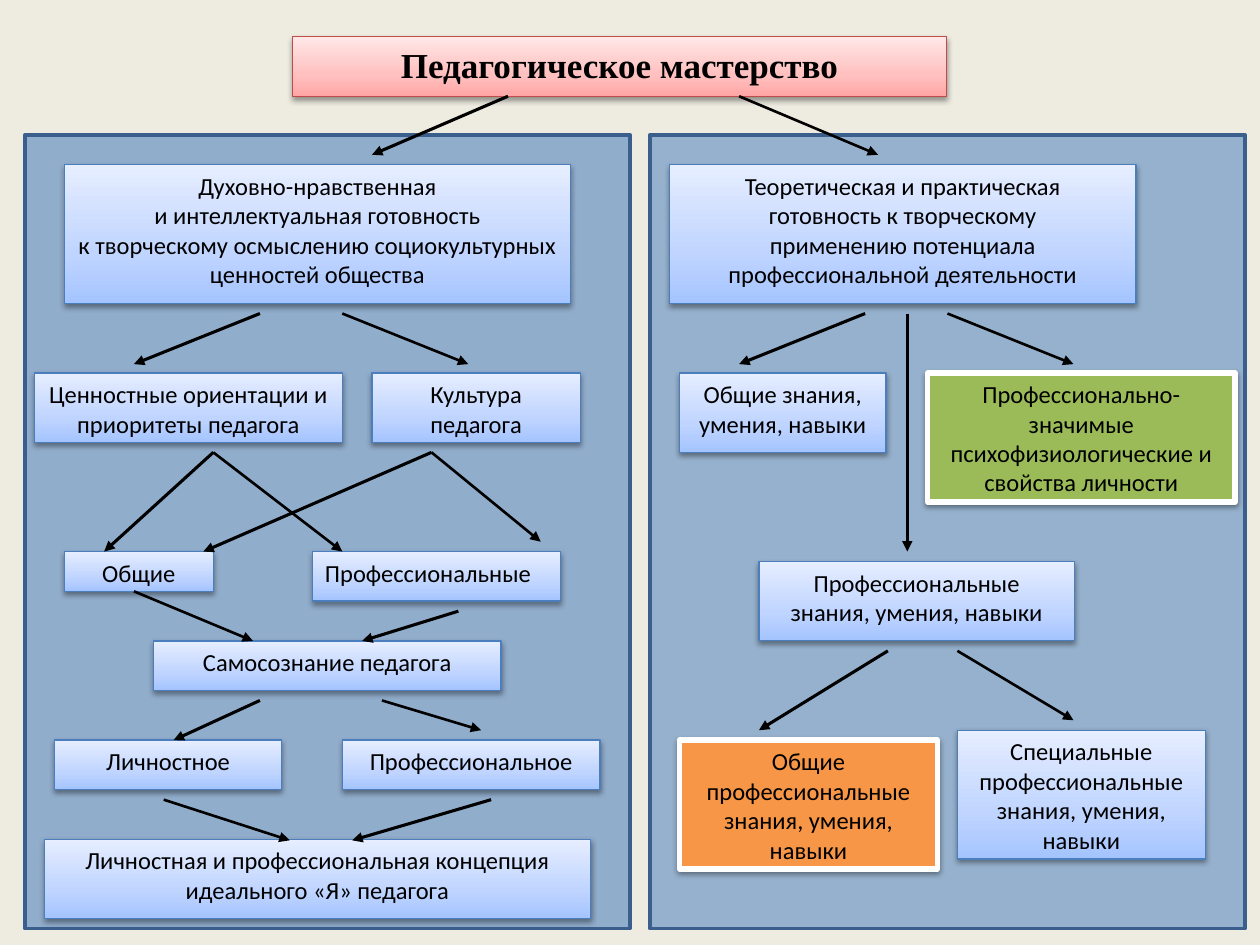
import copy
import lxml.etree
import pptx
import pptx.dml.color
import pptx.enum.shapes
import pptx.enum.text
import pptx.oxml.ns
import pptx.util

Cm = pptx.util.Cm
Pt = pptx.util.Pt
qn = pptx.oxml.ns.qn
SubElement = lxml.etree.SubElement
RECTANGLE = pptx.enum.shapes.MSO_SHAPE.RECTANGLE
ALIGN = pptx.enum.text.PP_ALIGN


def color(value):
    return pptx.dml.color.RGBColor.from_string(value)


def style_box(box, fills, line, line_width, lines, align=ALIGN.CENTER,
              font="Calibri", size=14, bold=False):
    if len(fills) == 1:
        box.fill.solid()
        box.fill.fore_color.rgb = color(fills[0])
    else:
        box.fill.gradient()
        box.fill.gradient_angle = 90
        stops = box._element.spPr.find(".//" + qn("a:gsLst"))
        stops.append(copy.deepcopy(stops[0]))
        for stop, value, position in zip(box.fill.gradient_stops, fills, (0, 0.35, 1)):
            stop.color.rgb = color(value)
            stop.position = position
    box.line.color.rgb = color(line)
    box.line.width = Pt(line_width)
    box.shadow.inherit = False
    effects = box._element.spPr.find(qn("a:effectLst"))
    shadow = SubElement(effects, qn("a:outerShdw"), blurRad="40000", dist="20000",
                        dir="5400000", rotWithShape="0")
    shade = SubElement(shadow, qn("a:srgbClr"), val="000000")
    SubElement(shade, qn("a:alpha"), val="38000")
    frame = box.text_frame
    frame.word_wrap = True
    frame.auto_size = pptx.enum.text.MSO_AUTO_SIZE.NONE
    frame.vertical_anchor = pptx.enum.text.MSO_ANCHOR.TOP
    for index, line_text in enumerate(lines):
        para = frame.add_paragraph() if index else frame.paragraphs[0]
        para.alignment = align
        para.space_before = Pt(0)
        span = para.add_run()
        span.text = line_text
        span.font.name = font
        span.font.size = Pt(size)
        span.font.bold = bold
        span.font.color.rgb = color("000000")


deck = pptx.Presentation()
deck.slide_width, deck.slide_height = Cm(25.4), Cm(19.05)
page = deck.slides.add_slide(deck.slide_layouts[5])
page.background.fill.solid()
page.background.fill.fore_color.rgb = color("EEECE1")

title = page.shapes.title
title.left, title.top, title.width, title.height = Cm(5.9), Cm(0.74), Cm(13.18), Cm(1.2)
style_box(title, ("FFA6A5", "FFC0BF", "FFE7E7"), "BF4C48", 0.75,
          ["Педагогическое мастерство"], font="Times New Roman", size=20, bold=True)

for left, width, opacity in ((13.1, 12, 55), (0.5, 12.2, 58)):
    panel = page.shapes.add_shape(RECTANGLE, Cm(left), Cm(2.72), Cm(width), Cm(16))
    panel.shadow.inherit = False
    panel.fill.solid()
    panel.fill.fore_color.rgb = color("4F81BD")
    tint = panel._element.spPr.find(qn("a:solidFill"))[0]
    SubElement(tint, qn("a:alpha"), val=str(opacity * 1000))
    panel.line.color.rgb = color("3A5F8C")
    panel.line.width = Pt(2)

BLUE = (("A4C4FF", "BFD4FF", "E6EEFF"), "4B7EBC", 0.75)
GREEN = (("9BBB59",), "FFFFFF", 3)
ORANGE = (("F79646",), "FFFFFF", 3)
boxes = [
    (1.3, 3.32, 10.2, 2.8, BLUE, ["Духовно-нравственная", "и интеллектуальная готовность",
     "к творческому осмыслению социокультурных ценностей общества"]),
    (13.5, 3.32, 9.4, 2.8, BLUE, ["Теоретическая и практическая", "готовность к творческому",
     "применению потенциала", "профессиональной деятельности"]),
    (0.7, 7.52, 6.2, 1.4, BLUE, ["Ценностные ориентации и приоритеты педагога"]),
    (7.5, 7.52, 4.2, 1.4, BLUE, ["Культура", "педагога"]),
    (13.7, 7.52, 4.16, 1.6, BLUE, ["Общие знания,", "умения, навыки"]),
    (18.7, 7.52, 6.2, 2.6, GREEN,
     ["Профессионально- значимые психофизиологические и свойства личности"]),
    (15.3, 11.32, 6.36, 1.6, BLUE, ["Профессиональные", "знания, умения, навыки"]),
    (13.7, 14.92, 5.2, 2.6, ORANGE, ["Общие", "профессиональные знания, умения, навыки"]),
    (19.3, 14.72, 5, 2.6, BLUE, ["Специальные", "профессиональные знания, умения, навыки"]),
    (1.3, 11.12, 3, 0.8, BLUE, ["Общие"]),
    (6.3, 11.12, 5, 1, BLUE, ["Профессиональные"]),
    (3.1, 12.92, 7, 1, BLUE, ["Самосознание педагога"]),
    (1.1, 14.92, 4.58, 1, BLUE, ["Личностное"]),
    (6.9, 14.92, 5.2, 1, BLUE, ["Профессиональное"]),
    (0.9, 16.92, 11, 1.6, BLUE,
     ["Личностная и профессиональная концепция идеального «Я» педагога"]),
]
for left, top, width, height, look, lines in boxes:
    box = page.shapes.add_shape(RECTANGLE, Cm(left), Cm(top), Cm(width), Cm(height))
    align = ALIGN.LEFT if lines == ["Профессиональные"] else ALIGN.CENTER
    style_box(box, *look, lines, align)

arrows = [
    (10.24, 1.94, 7.5, 3.12), (14.9, 1.94, 17.7, 3.12),
    (5.24, 6.32, 2.7, 7.34), (6.9, 6.32, 9.44, 7.34),
    (17.44, 6.32, 14.9, 7.34), (19.1, 6.32, 21.64, 7.34),
    (18.29, 6.32, 18.29, 11.12),
    (4.3, 9.12, 2.1, 11.12), (4.3, 9.12, 6.9, 11.12),
    (8.7, 9.12, 4.1, 11.12), (8.7, 9.12, 10.9, 10.92),
    (2.7, 11.92, 5.1, 12.92), (9.24, 12.32, 7.3, 12.92),
    (17.9, 13.12, 15.3, 14.72), (19.3, 13.12, 21.64, 14.52),
    (5.24, 14.12, 3.5, 14.92), (7.7, 14.12, 9.7, 14.72),
    (3.3, 16.12, 5.84, 16.94), (9.9, 16.12, 7.1, 16.94),
]
for start_x, start_y, end_x, end_y in arrows:
    arrow = page.shapes.add_connector(pptx.enum.shapes.MSO_CONNECTOR.STRAIGHT,
                                      Cm(start_x), Cm(start_y), Cm(end_x), Cm(end_y))
    arrow.line.color.rgb = color("000000")
    arrow.line.width = Pt(1.75 if end_x < start_x else 1.5)
    SubElement(arrow.line._get_or_add_ln(), qn("a:tailEnd"), type="triangle")
    SubElement(arrow._element.spPr, qn("a:effectLst"))

deck.save("out.pptx")
